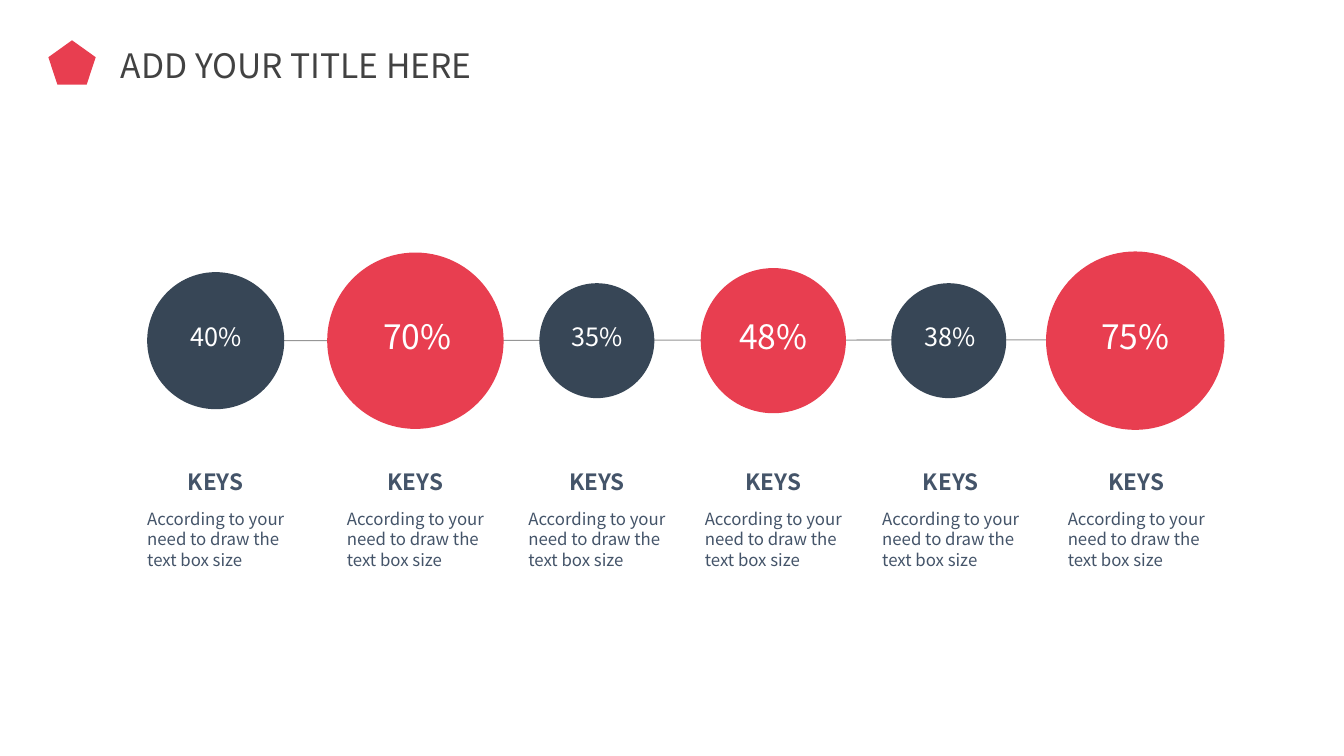
import pptx
import pptx.dml.color
import pptx.enum.shapes
import pptx.enum.text
import pptx.oxml
import pptx.util

Inches = pptx.util.Inches
Shape = pptx.enum.shapes.MSO_SHAPE
Align = pptx.enum.text.PP_ALIGN

COLOURS = {
    "red": "E83E50",
    "navy": "374656",
    "title": "424242",
    "slate": "445469",
    "white": "FFFFFF",
    "line": "969696",
}
FONT = "Noto Sans CJK JP"
AXIS_Y = 3.38
LABEL_WIDTH, KEY_WIDTH = 1.33, 2.56
DESCRIPTION = "According to your need to draw the text box size"

# percentage, diameter, then the centres of circle, percentage and caption
COLUMNS = [
    ("40%", 1.36, 2.14, 2.14, 2.14),
    ("70%", 1.75, 4.12, 4.14, 4.12),
    ("35%", 1.14, 5.92, 5.92, 5.92),
    ("48%", 1.44, 7.67, 7.67, 7.67),
    ("38%", 1.14, 9.41, 9.42, 9.43),
    ("75%", 1.77, 11.26, 11.26, 11.27),
]


def colour(name):
    return pptx.dml.color.RGBColor.from_string(COLOURS[name])


class Painter:
    def __init__(self, page):
        self.page = page

    def shape(self, kind, left, top, width, height, fill):
        item = self.page.shapes.add_shape(
            kind, Inches(left), Inches(top), Inches(width), Inches(height))
        item.shadow.inherit = False
        item.fill.solid()
        item.fill.fore_color.rgb = colour(fill)
        item.line.fill.background()

    def line(self, x1, y1, x2, y2):
        item = self.page.shapes.add_connector(
            pptx.enum.shapes.MSO_CONNECTOR.STRAIGHT,
            Inches(x1), Inches(y1), Inches(x2), Inches(y2))
        item.line.color.rgb = colour("line")
        item.line.width = pptx.util.Pt(0.75)
        properties = item._element.spPr
        properties.append(pptx.oxml.parse_xml(
            '<a:effectLst xmlns:a='
            '"http://schemas.openxmlformats.org/drawingml/2006/main"/>'))

    def text(self, words, left, top, width, height, size, ink,
             align=Align.LEFT, inset=(0, 0), bold=False):
        """Add a text box; inset is the horizontal and vertical margin."""
        box = self.page.shapes.add_textbox(
            Inches(left), Inches(top), Inches(width), Inches(height))
        side, end = map(Inches, inset)
        frame_format = {
            "word_wrap": True,
            "auto_size": pptx.enum.text.MSO_AUTO_SIZE.SHAPE_TO_FIT_TEXT,
            "margin_left": side, "margin_right": side,
            "margin_top": end, "margin_bottom": end,
        }
        for name, value in frame_format.items():
            setattr(box.text_frame, name, value)
        para = box.text_frame.paragraphs[0]
        para.alignment = align
        span = para.add_run()
        span.text = words
        font_format = {"name": FONT, "size": pptx.util.Pt(size), "bold": bold}
        for name, value in font_format.items():
            setattr(span.font, name, value)
        span.font.color.rgb = colour(ink)


def main():
    deck = pptx.Presentation()
    deck.slide_width, deck.slide_height = Inches(13.33), Inches(7.5)
    painter = Painter(deck.slides.add_slide(deck.slide_layouts[6]))

    painter.shape(Shape.REGULAR_PENTAGON, 0.48, 0.4, 0.47, 0.44, "red")
    painter.text("ADD YOUR TITLE HERE", 1.1, 0.4, 4.95, 0.51, 24, "title",
                 inset=(0.1, 0.05))
    painter.line(1.46, AXIS_Y, 12.14, AXIS_Y - 0.01)

    for index, (percent, size, circle_x, label_x, caption_x) in enumerate(COLUMNS):
        fill, points, label_top, label_height = (
            ("red", 24, 3.1, 0.45) if index % 2 else ("navy", 18, 3.16, 0.35))
        painter.shape(Shape.OVAL, circle_x - size / 2, AXIS_Y - size / 2,
                      size, size, fill)
        painter.text(percent, label_x - LABEL_WIDTH / 2, label_top, LABEL_WIDTH,
                     label_height, points, "white", Align.CENTER, (0.05, 0.03))
        painter.text("KEYS", caption_x - KEY_WIDTH / 2, 4.64, KEY_WIDTH, 0.27,
                     16, "slate", Align.CENTER, bold=True)
        painter.text(DESCRIPTION, caption_x - 0.68, 5.05, 1.51, 0.61, 12, "slate")

    deck.save("out.pptx")


if __name__ == "__main__":
    main()
